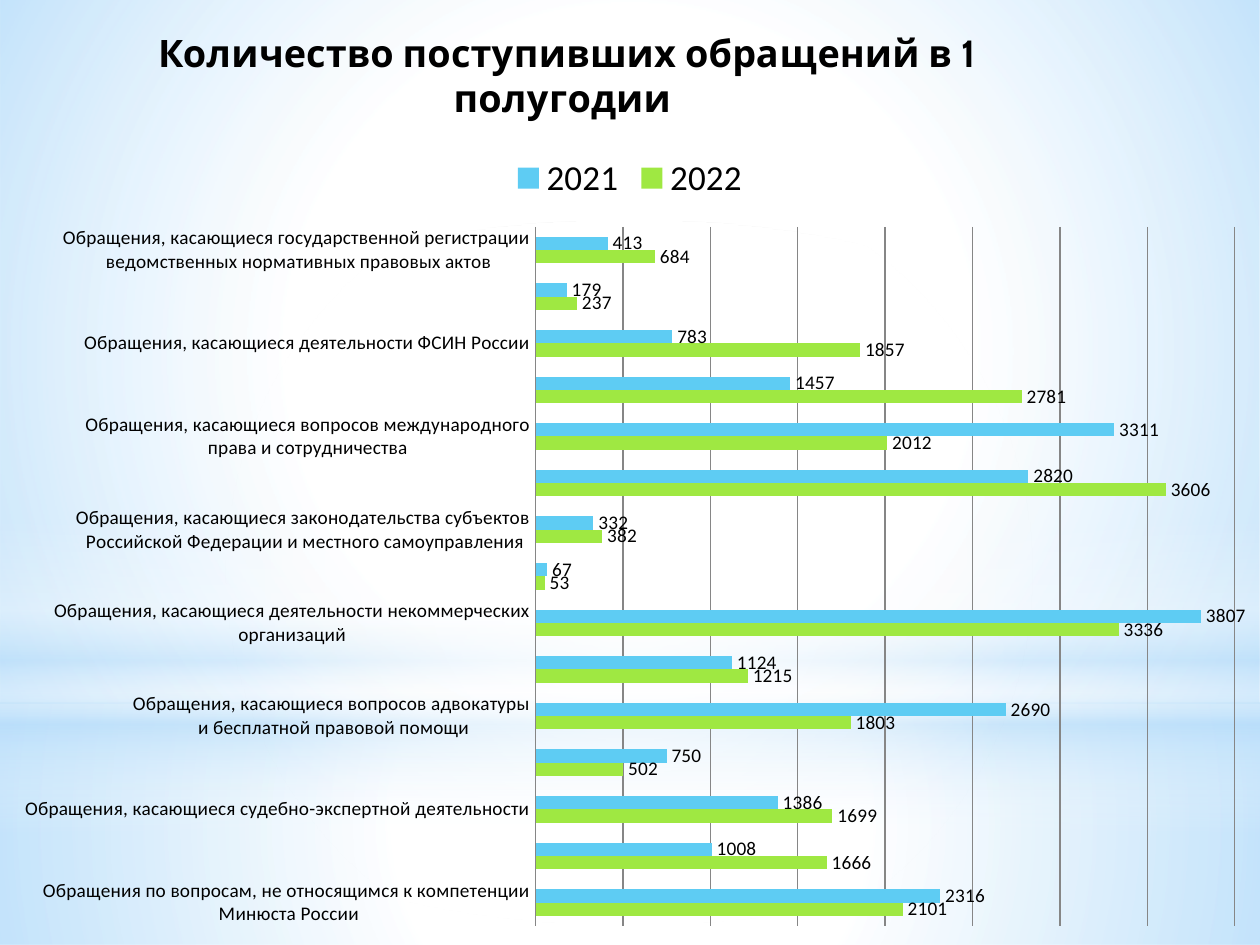
import pptx
import pptx.chart.data
import pptx.dml.color
import pptx.enum.chart
import pptx.enum.shapes
import pptx.oxml
import pptx.oxml.ns
import pptx.util

Inches, Pt = pptx.util.Inches, pptx.util.Pt
RGBColor = pptx.dml.color.RGBColor
SHAPE = pptx.enum.shapes.MSO_SHAPE
CH = pptx.enum.chart

WHITE = RGBColor(0xFF, 0xFF, 0xFF)
PALE_BLUE = RGBColor(0xB4, 0xDC, 0xFA)
BLACK = RGBColor(0, 0, 0)
GRID = RGBColor(0x86, 0x86, 0x86)
GREEN = RGBColor(0x9F, 0xE8, 0x42)
BLUE = RGBColor(0x5E, 0xCC, 0xF3)

TITLE = "Количество поступивших обращений в 1 полугодии "
# Category, 2022, 2021: from the bottom up
ROWS = [
    ("Обращения по вопросам, не относящимся к компетенции\n Минюста России", 2101, 2316),
    ("Обращения по иным вопросам, касающимся деятельности\n Минюста России", 1666, 1008),
    ("Обращения, касающиеся судебно-экспертной деятельности", 1699, 1386),
    ("Обращения, касающиеся вопросов деятельности органов ЗАГС\n"
     " и регистрации актов гражданского состояния", 502, 750),
    ("Обращения, касающиеся вопросов адвокатуры\n и бесплатной правовой помощи", 1803, 2690),
    ("Обращения, касающиеся нотариальной деятельности", 1215, 1124),
    ("Обращения, касающиеся деятельности некоммерческих организаций", 3336, 3807),
    ("Обращения, касающиеся законодательства СССР, РСФСР, \nвопросов инкорпорации", 53, 67),
    ("Обращения, касающиеся законодательства субъектов\n"
     " Российской Федерации и местного самоуправления", 382, 332),
    ("Обращения, касающиеся федерального законодательства", 3606, 2820),
    ("Обращения, касающиеся вопросов международного\nправа и сотрудничества", 2012, 3311),
    ("Обращения, касающиеся деятельности ФССП России", 2781, 1457),
    ("Обращения, касающиеся деятельности ФСИН России", 1857, 783),
    ("Обращения, касающиеся кадровой работы", 237, 179),
    ("Обращения, касающиеся государственной регистрации\n"
     " ведомственных нормативных правовых актов", 684, 413),
]
SERIES_COLORS = {"2022": GREEN, "2021": BLUE}

RADIAL = ('<a:path path="circle"><a:fillToRect l="50000" t="50000" r="50000" b="50000"/>'
          '</a:path>')
LINEAR = '<a:lin ang="5400000" scaled="0"/>'
# Shape, top, height, direction, stops of (position %, colour, opacity %)
GLOWS = [
    (SHAPE.RECTANGLE, 5.58, 1.92, RADIAL,
     [(0, WHITE, 91), (37, WHITE, 76), (100, PALE_BLUE, 79)]),
    (SHAPE.RECTANGLE, 0, 5.58, RADIAL,
     [(0, WHITE, 89), (48, WHITE, 62), (100, PALE_BLUE, 79)]),
    (SHAPE.RECTANGLE, 4.12, 2.5, LINEAR,
     [(0, WHITE, 0), (29, WHITE, 30), (45, PALE_BLUE, 40), (55, WHITE, 26),
      (65, PALE_BLUE, 60), (100, WHITE, 0)]),
    (SHAPE.OVAL, 1.75, 5.58, RADIAL, [(0, WHITE, 100), (56, WHITE, 0)]),
]


def set_attrs(obj, **values):
    for name, value in values.items():
        setattr(obj, name, value)


def set_font(font, size, name="Calibri", bold=False):
    set_attrs(font, size=Pt(size), name=name, bold=bold)
    font.color.rgb = BLACK


def gradient(sp, direction, stops):
    """Fill a shape with a gradient whose stops have their own opacity."""
    gs = "".join(
        f'<a:gs pos="{pos * 1000}"><a:srgbClr val="{color}">'
        f'<a:alpha val="{alpha * 1000}"/></a:srgbClr></a:gs>'
        for pos, color, alpha in stops)
    fill = pptx.oxml.parse_xml(
        f'<a:gradFill {pptx.oxml.ns.nsdecls("a")} rotWithShape="1">'
        f'<a:gsLst>{gs}</a:gsLst>{direction}</a:gradFill>')
    sp._element.spPr.find(pptx.oxml.ns.qn("a:prstGeom")).addnext(fill)


def manual_layout(element, x, y, w=None, h=None, inner=False):
    """Place a chart part by fractions of the chart's size."""
    qn = pptx.oxml.ns.qn
    old = element.find(qn("c:layout"))
    if old is not None:
        element.remove(old)
    target = '<c:layoutTarget val="inner"/>' if inner else ""
    sizes = "".join(f'<c:{k} val="{v}"/>' for k, v in
                    (("x", x), ("y", y), ("w", w), ("h", h)) if v is not None)
    layout = pptx.oxml.parse_xml(
        f'<c:layout {pptx.oxml.ns.nsdecls("c")}><c:manualLayout>{target}'
        f'<c:xMode val="edge"/><c:yMode val="edge"/>{sizes}</c:manualLayout></c:layout>')
    before = element.find(qn("c:tx"))
    if before is None:
        before = element.find(qn("c:legendPos"))
    if before is None:
        element.insert(0, layout)
    else:
        before.addnext(layout)


def add_background(slide, left, top, width):
    for shape, y, height, direction, stops in GLOWS:
        s = slide.shapes.add_shape(shape, left, top + Inches(y), width, Inches(height))
        s.shadow.inherit = False
        s.line.fill.background()
        gradient(s, direction, stops)


def add_appeals_chart(slide, left, top, width, height):
    data = pptx.chart.data.CategoryChartData()
    labels, *columns = zip(*ROWS)
    data.categories = labels
    for name, values in zip(SERIES_COLORS, columns):
        data.add_series(name, values)
    chart = slide.shapes.add_chart(
        CH.XL_CHART_TYPE.BAR_CLUSTERED, left, top, width, height, data).chart
    set_font(chart.font, 18, "Cabin")

    # Title
    chart.has_title = True
    tf = chart.chart_title.text_frame
    tf.text = TITLE
    set_font(tf.paragraphs[0].runs[0].font, 21.6, "Cabin", True)
    chart.chart_title.include_in_layout = False
    manual_layout(chart.chart_title._element, 0.12, 0.02)

    # Legend
    chart.has_legend = True
    set_attrs(chart.legend, position=CH.XL_LEGEND_POSITION.TOP, include_in_layout=False)
    set_font(chart.legend.font, 20)

    # Axes
    set_attrs(chart.category_axis, major_tick_mark=CH.XL_TICK_MARK.NONE,
              minor_tick_mark=CH.XL_TICK_MARK.NONE)
    set_font(chart.category_axis.tick_labels.font, 11)
    chart.category_axis.format.line.color.rgb = GRID
    set_attrs(chart.value_axis, visible=False, has_major_gridlines=True,
              minimum_scale=0, maximum_scale=4000, major_unit=500)
    chart.value_axis.major_gridlines.format.line.color.rgb = GRID

    # Bars and their values
    plot = chart.plots[0]
    set_attrs(plot, gap_width=150, overlap=0, vary_by_categories=False)
    for series in plot.series:
        series.format.fill.solid()
        series.format.fill.fore_color.rgb = SERIES_COLORS[series.name]
        set_attrs(series.data_labels, show_value=True,
                  position=CH.XL_LABEL_POSITION.OUTSIDE_END)
        set_font(series.data_labels.font, 11)
    plot_area = chart._chartSpace.chart.plotArea
    manual_layout(plot_area, 0.425, 0.24, 0.555, 0.74, inner=True)


def main():
    prs = pptx.Presentation()
    set_attrs(prs, slide_width=Inches(10), slide_height=Inches(7.5))
    slide = prs.slides.add_slide(prs.slide_layouts[6])
    add_background(slide, 0, 0, prs.slide_width)
    add_appeals_chart(slide, 0, 0, prs.slide_width, prs.slide_height)
    prs.save("out.pptx")


if __name__ == "__main__":
    main()
